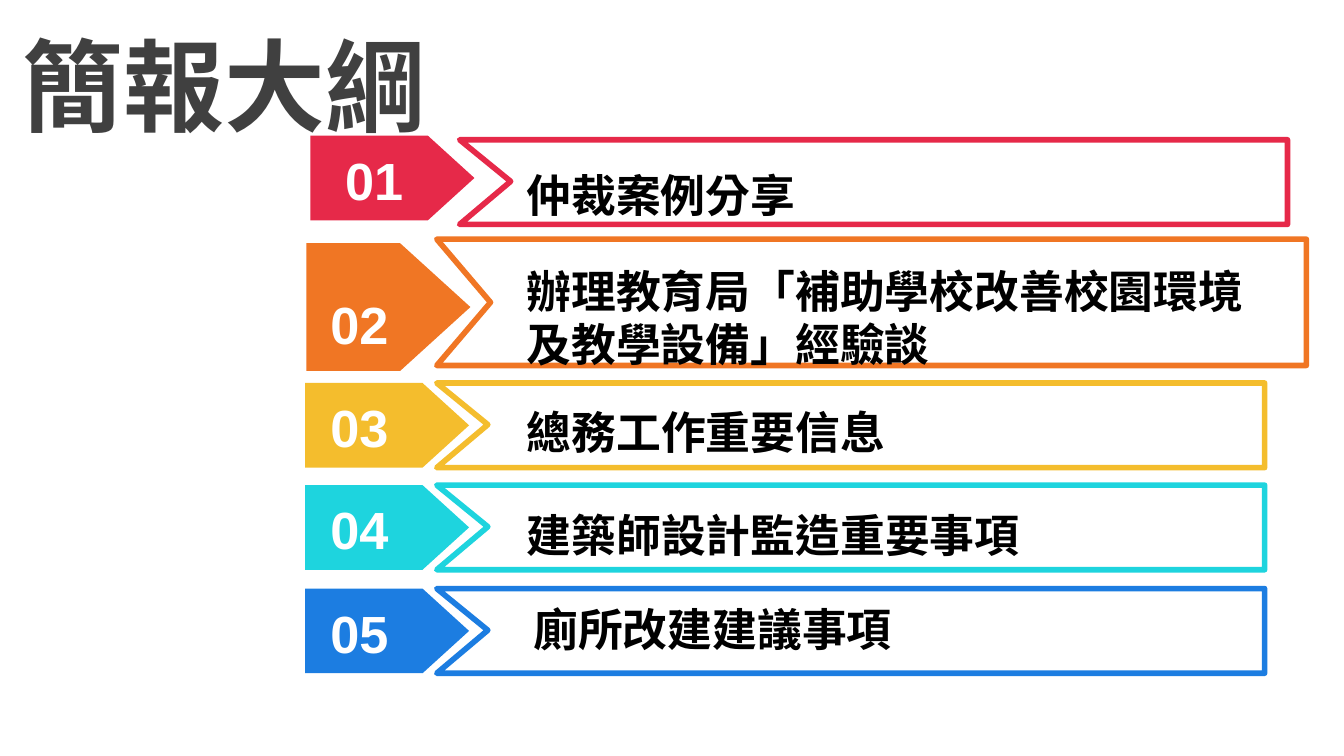
from dataclasses import dataclass

from lxml import etree
from pptx import Presentation
from pptx.dml.color import RGBColor
from pptx.enum.shapes import MSO_SHAPE
from pptx.enum.text import MSO_ANCHOR, MSO_AUTO_SIZE, PP_ALIGN
from pptx.oxml.ns import qn
from pptx.util import Pt

PX = 9144
WIDTH = 1000 * PX
HEIGHT = WIDTH * 9 // 16
FONT = "Arial"
ARROW = MSO_SHAPE.PENTAGON
MIDDLE = MSO_ANCHOR.MIDDLE
GROW = MSO_AUTO_SIZE.SHAPE_TO_FIT_TEXT
FIXED = MSO_AUTO_SIZE.NONE
JUSTIFY = PP_ALIGN.JUSTIFY

COLORS = {
    "white": "FFFFFF",
    "black": "000000",
    "gray": "404040",
    "red": "E62949",
    "orange": "F07624",
    "yellow": "F4BD2D",
    "cyan": "1ED4DE",
    "blue": "1C7DE1",
}


@dataclass(frozen=True)
class Box:
    left: int
    top: int
    width: int
    height: int

    def emu(self) -> tuple[int, int, int, int]:
        return self.left * PX, self.top * PX, self.width * PX, self.height * PX


@dataclass(frozen=True)
class Item:
    color: str
    text: str
    arrow: Box
    frame: Box
    notch: int
    number: Box
    label: Box


def plain(color: str, text: str, top: int, label: Box) -> Item:
    return Item(color, text, Box(227, top, 122, 63), Box(325, top, 616, 63),
                38, Box(236, top + 9, 66, 47), label)


ITEMS = [
    Item("red", "仲裁案例分享", Box(231, 101, 122, 63), Box(342, 104, 616, 63),
         38, Box(247, 110, 66, 47), Box(382, 120, 354, 50)),
    Item("orange", "辦理教育局「補助學校改善校園環境及教學設備」經驗談",
         Box(228, 181, 122, 95), Box(325, 178, 647, 94),
         40, Box(236, 217, 66, 47), Box(382, 191, 576, 91)),
    plain("yellow", "總務工作重要信息", 285, Box(382, 296, 591, 50)),
    plain("cyan", "建築師設計監造重要事項", 361, Box(382, 373, 618, 50)),
    plain("blue", "廁所改建建議事項", 438, Box(387, 443, 591, 50)),
]


def rgb(name: str) -> RGBColor:
    return RGBColor.from_string(COLORS[name])


def write(frame, text: str, size: int, color: str) -> None:
    run = frame.paragraphs[0].add_run()
    run.text = text
    run.font.name = FONT
    run.font.size = Pt(size)
    run.font.bold = True
    run.font.color.rgb = rgb(color)
    run._r.get_or_add_rPr().set("lang", "zh-TW")


def add_text(slide, box: Box, text: str, size: int, color: str):
    frame = slide.shapes.add_textbox(*box.emu()).text_frame
    frame.word_wrap = True
    frame.auto_size = GROW
    write(frame, text, size, color)
    return frame


def add_title(slide, box: Box, text: str) -> None:
    title = slide.shapes.title
    title.left, title.top, title.width, title.height = box.emu()
    frame = title.text_frame
    frame.auto_size = FIXED
    frame.vertical_anchor = MIDDLE
    frame.paragraphs[0].alignment = JUSTIFY
    write(frame, text, 54, "gray")


def add_arrow(slide, item: Item) -> None:
    arrow = slide.shapes.add_shape(ARROW, *item.arrow.emu())
    arrow.adjustments[0] = 0.55
    arrow.shadow.inherit = False
    arrow.fill.solid()
    arrow.fill.fore_color.rgb = rgb(item.color)
    arrow.line.fill.background()


def add_frame(slide, item: Item) -> None:
    box = item.frame
    right, low = box.left + box.width, box.top + box.height
    path = slide.shapes.build_freeform(box.left, box.top, scale=PX)
    path.add_line_segments([(right, box.top), (right, low), (box.left, low),
                            (box.left + item.notch, box.top + box.height // 2)])
    shape = path.convert_to_shape()
    shape.shadow.inherit = False
    shape.fill.solid()
    shape.fill.fore_color.rgb = rgb("white")
    shape.line.color.rgb = rgb(item.color)
    shape.line.width = Pt(3)
    etree.SubElement(shape.line._get_or_add_ln(), qn("a:round"))


def add_number(slide, box: Box, text: str) -> None:
    frame = add_text(slide, box, text, 28, "white")
    frame.vertical_anchor = MIDDLE
    frame.margin_top = frame.margin_bottom = 0


def main() -> None:
    deck = Presentation()
    deck.slide_width, deck.slide_height = WIDTH, HEIGHT
    slide = deck.slides.add_slide(deck.slide_layouts[5])
    add_title(slide, Box(7, 14, 517, 97), "簡報大綱")
    for rank, item in enumerate(ITEMS, 1):
        add_arrow(slide, item)
        add_frame(slide, item)
        add_number(slide, item.number, f"{rank:02d}")
    for item in ITEMS:
        add_text(slide, item.label, item.text, 24, "black")
    deck.save("out.pptx")


if __name__ == "__main__":
    main()
